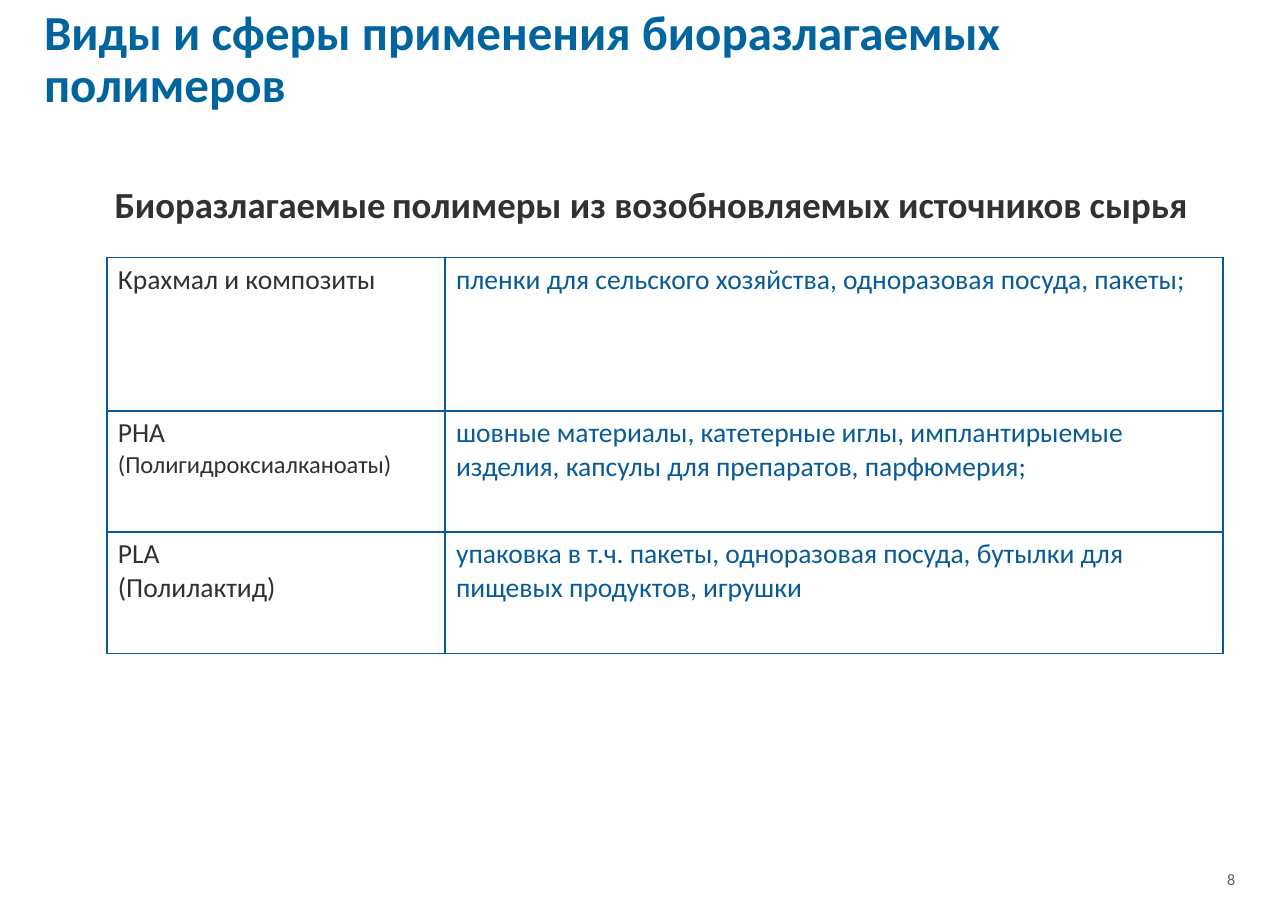
from dataclasses import dataclass
from lxml.etree import SubElement as Sub
from pptx import Presentation
from pptx.dml.color import RGBColor as Rgb
from pptx.enum.text import MSO_ANCHOR as Anchor, MSO_AUTO_SIZE as Fit, PP_ALIGN as Align
from pptx.oxml.ns import qn
from pptx.util import Inches, Pt

TITLE = "Виды и сферы применения биоразлагаемых полимеров"
HEAD = [("Биоразлагаемые", {}), (" ", {"size": 18}),
        ("полимеры из возобновляемых источников сырья", {})]
ROWS = [
    (["Крахмал и композиты"],
     ["пленки для сельского хозяйства, одноразовая посуда, пакеты;"]),
    ([[("PHA ", {}), ("(Полигидроксиалканоаты)", {"size": 16})]],
     ["шовные материалы, катетерные иглы, имплантирыемые изделия, "
      "капсулы для препаратов, парфюмерия;"]),
    (["PLA", "(Полилактид)"],
     ["упаковка в т.ч. пакеты, одноразовая посуда, бутылки для "
      "пищевых продуктов, игрушки"]),
]
PAGE = "8"

WIDTH, HEIGHT = 11.69, 8.27
COLS = [3.07, 7.06]
TALL = [1.39, 1.1, 1.1]
PLACES = {
    "title": (0.3, 0, 8.96, 1.1),
    "head": (0.79, 1.6, 10.24, 0.5),
    "table": (0.97, 2.34, sum(COLS), sum(TALL)),
    "page": (8.68, 7.76, 2.63, 0.44),
}


@dataclass(frozen=True)
class Theme:
    font: str = "Calibri"
    title: str = "00659F"
    blue: str = "095B95"
    dark: str = "323032"
    gray: str = "636266"
    big: float = 32
    mid: float = 24
    body: float = 18
    small: float = 10.5
    rule: float = 1


LOOK = Theme()


def place(name):
    return [Inches(n) for n in PLACES[name]]


def write(frame, lines, size=LOOK.body, color=LOOK.dark, bold=False,
          align=Align.LEFT, space=1.0):
    frame.word_wrap = True
    for i, line in enumerate(lines):
        para = frame.add_paragraph() if i else frame.paragraphs[0]
        para.alignment = align
        para.line_spacing = space
        for text, own in [(line, {})] if isinstance(line, str) else line:
            run = para.add_run()
            run.text = text
            font = run.font
            font.name = LOOK.font
            font.size = Pt(own.get("size", size))
            font.bold = bold
            font.color.rgb = Rgb.from_string(color)


def border(cell):
    props = cell._tc.get_or_add_tcPr()
    for side in ("lnL", "lnR", "lnT", "lnB"):
        line = Sub(props, qn("a:" + side), w=str(Pt(LOOK.rule)))
        fill = Sub(line, qn("a:solidFill"))
        Sub(fill, qn("a:srgbClr"), val=LOOK.blue)
    cell.fill.background()


def add_grid(slide):
    grid = slide.shapes.add_table(len(ROWS), len(COLS), *place("table")).table
    grid.first_row = grid.horz_banding = False
    for col, wide in zip(grid.columns, COLS):
        col.width = Inches(wide)
    for row, tall, texts in zip(grid.rows, TALL, ROWS):
        row.height = Inches(tall)
        for cell, lines, color in zip(row.cells, texts, (LOOK.dark, LOOK.blue)):
            border(cell)
            write(cell.text_frame, lines, color=color)


def main():
    deck = Presentation()
    deck.slide_width, deck.slide_height = Inches(WIDTH), Inches(HEIGHT)
    slide = deck.slides.add_slide(deck.slide_layouts[5])

    title = slide.shapes.title
    title.left, title.top, title.width, title.height = place("title")
    title.text_frame.auto_size = Fit.NONE
    title.text_frame.vertical_anchor = Anchor.MIDDLE
    write(title.text_frame, [TITLE], size=LOOK.big, color=LOOK.title,
          bold=True, space=0.9)

    head = slide.shapes.add_textbox(*place("head")).text_frame
    write(head, [HEAD], size=LOOK.mid, bold=True, align=Align.CENTER)

    add_grid(slide)

    page = slide.shapes.add_textbox(*place("page")).text_frame
    page.vertical_anchor = Anchor.MIDDLE
    write(page, [PAGE], size=LOOK.small, color=LOOK.gray, align=Align.RIGHT)

    deck.save("out.pptx")


if __name__ == "__main__":
    main()
